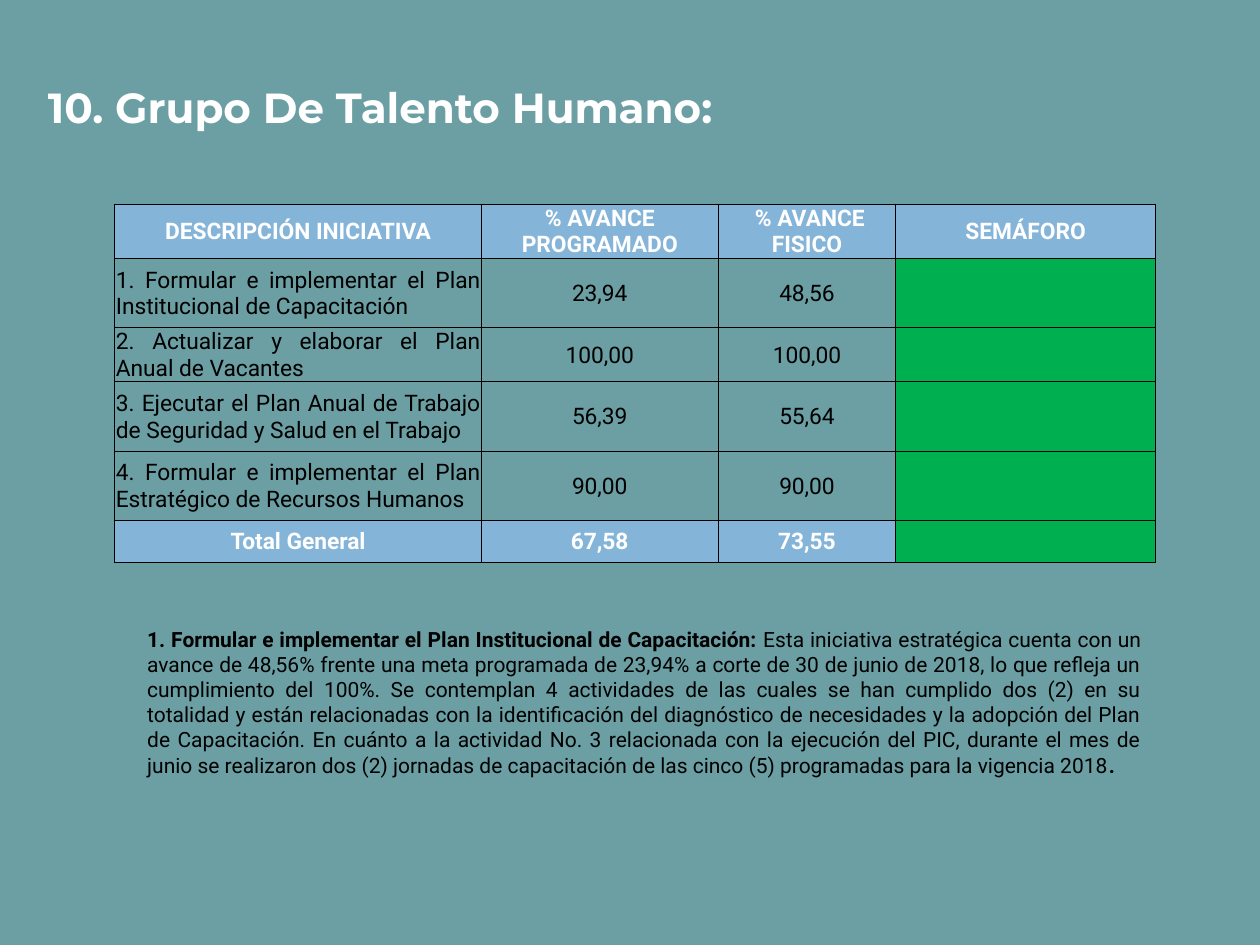
from lxml.etree import SubElement
from pptx import Presentation
from pptx.dml.color import RGBColor
from pptx.enum.text import MSO_ANCHOR as Anchor, MSO_AUTO_SIZE as AutoSize, PP_ALIGN as Align
from pptx.oxml.ns import qn
from pptx.util import Inches, Pt

# Content
HEADING = "10. Grupo De Talento Humano:"
HEADERS = ["DESCRIPCIÓN INICIATIVA", "% AVANCE PROGRAMADO", " % AVANCE FISICO", "SEMÁFORO"]
INITIATIVES = [
    ("1. Formular e implementar el Plan Institucional de Capacitación", "23,94", "48,56", ""),
    ("2. Actualizar y elaborar el Plan Anual de Vacantes", "100,00", "100,00", ""),
    ("3. Ejecutar el Plan Anual de Trabajo de Seguridad y Salud en el Trabajo", "56,39", "55,64", ""),
    ("4. Formular e implementar el Plan Estratégico de Recursos Humanos", "90,00", "90,00", ""),
]
TOTAL = ("Total General", "67,58", "73,55", "")
DETAIL = [
    ("1. Formular e implementar el Plan Institucional de Capacitación: ", True),
    ("Esta iniciativa estratégica cuenta con un avance de 48,56% frente una meta programada "
     "de 23,94% a corte de 30 de junio de 2018, lo que refleja un cumplimiento del 100%. "
     "Se contemplan 4 actividades de las cuales se han cumplido dos (2) en su totalidad y "
     "están relacionadas con la identificación del diagnóstico de necesidades y la adopción "
     "del Plan de Capacitación. En cuánto a la actividad No. 3 relacionada con la ejecución "
     "del PIC, durante el mes de junio se realizaron dos (2) jornadas de capacitación de las "
     "cinco (5) programadas para la vigencia 2018", False),
    (".", True),
]

# Look
TEAL, BLUE, GREEN, WHITE, BLACK = "6B9FA4", "85B4D9", "00B050", "FFFFFF", "000000"
COLUMN_WIDTHS = [2.91, 1.88, 1.41, 2.06]
ROW_HEIGHTS = [0.43, 0.55, 0.43, 0.55, 0.55, 0.33]


def color(value):
    return RGBColor.from_string(value)


def write(frame, spans, size, font="Roboto", ink=BLACK, align=Align.LEFT):
    """Fill the first paragraph with (text, bold) spans."""
    para = frame.paragraphs[0]
    para.alignment = align
    for text, bold in spans:
        span = para.add_run()
        span.text = text
        span.font.name, span.font.size, span.font.bold = font, Pt(size), bold
        span.font.color.rgb = color(ink)


def place(box, left, top, width, height):
    """Position a text holder and anchor its text at the bottom."""
    box.left, box.top, box.width, box.height = map(Inches, (left, top, width, height))
    frame = box.text_frame
    frame.word_wrap, frame.auto_size = True, AutoSize.NONE
    frame.vertical_anchor = Anchor.BOTTOM
    frame.margin_left = frame.margin_right = Inches(0.1)
    frame.margin_top = frame.margin_bottom = Inches(0.1)
    return frame


def outline(cell):
    """Draw thin black borders on all four sides."""
    properties = cell._tc.get_or_add_tcPr()
    for side in ("a:lnL", "a:lnR", "a:lnT", "a:lnB"):
        line = SubElement(properties, qn(side), w=str(Pt(0.5)))
        SubElement(SubElement(line, qn("a:solidFill")), qn("a:srgbClr"), val=BLACK)


deck = Presentation()
deck.slide_width, deck.slide_height = Inches(10), Inches(7.5)
page = deck.slides.add_slide(deck.slide_layouts[5])
page.background.fill.solid()
page.background.fill.fore_color.rgb = color(TEAL)

# Heading
write(place(page.shapes.title, 0.28, 0.38, 9.29, 0.77), [(HEADING, True)],
      size=24, font="Montserrat", ink=WHITE)

# Progress table
rows = [HEADERS, *INITIATIVES, TOTAL]
table = page.shapes.add_table(
    len(rows), len(HEADERS), Inches(0.91), Inches(1.62),
    Inches(sum(COLUMN_WIDTHS)), Inches(sum(ROW_HEIGHTS))).table
table.horz_banding = False
for column, width in zip(table.columns, COLUMN_WIDTHS):
    column.width = Inches(width)
for r, (values, height) in enumerate(zip(rows, ROW_HEIGHTS)):
    table.rows[r].height = Inches(height)
    strong = r in (0, len(rows) - 1)
    for c, text in enumerate(values):
        cell = table.cell(r, c)
        cell.margin_left = cell.margin_right = cell.margin_top = Inches(0.01)
        cell.margin_bottom = 0
        cell.vertical_anchor = Anchor.MIDDLE
        outline(cell)
        fill = GREEN if not text else BLUE if strong else None
        if fill:
            cell.fill.solid()
            cell.fill.fore_color.rgb = color(fill)
        else:
            cell.fill.background()
        if text:
            write(cell.text_frame, [(text, strong)], size=13, ink=WHITE if strong else BLACK,
                  align=Align.CENTER if strong or c else Align.JUSTIFY)

# Explanation of the first initiative
detail_box = page.shapes.add_textbox(0, 0, 0, 0)
write(place(detail_box, 1.07, 5.5, 8.09, 0.77), DETAIL, size=12, align=Align.JUSTIFY)

deck.save("out.pptx")
